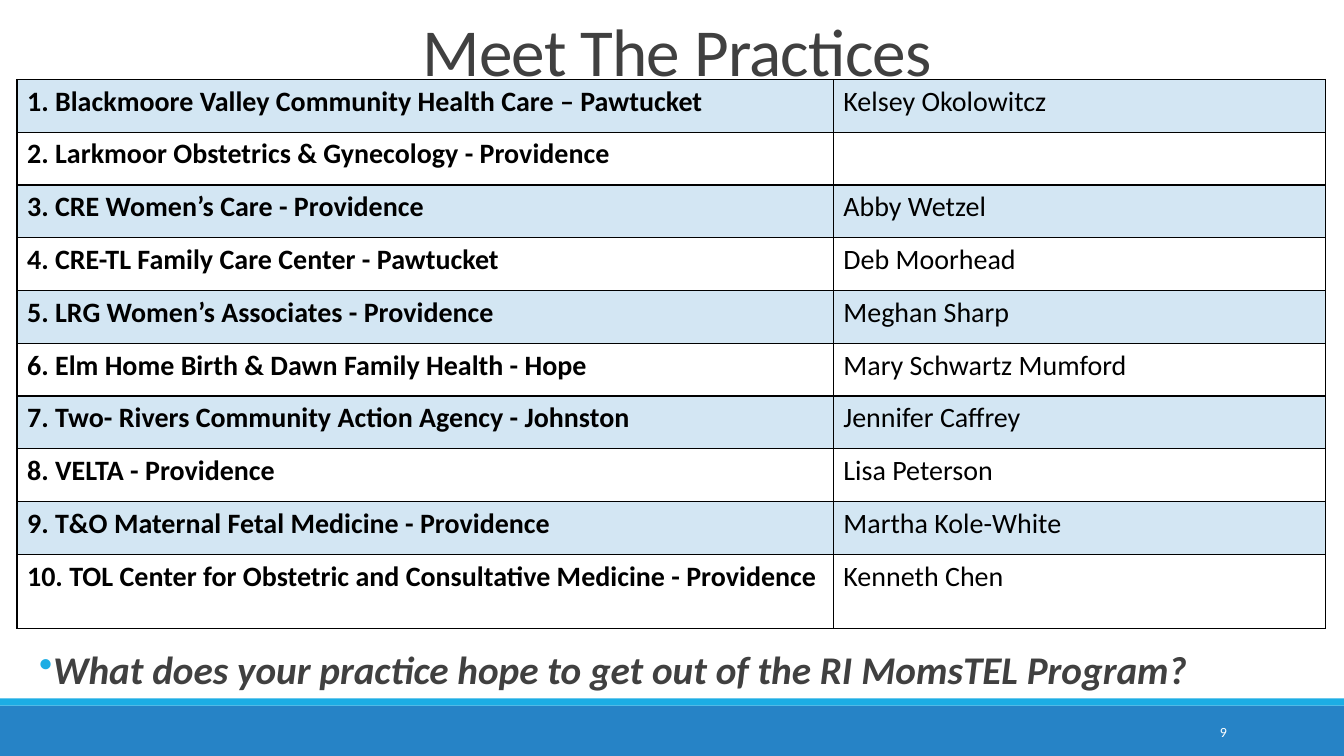
"""Build the slide that lists the practices and their contacts."""
import pptx
import pptx.util
import pptx.dml.color
import pptx.enum.shapes
import pptx.enum.text
import pptx.oxml
import pptx.oxml.ns

Cm, Pt = pptx.util.Cm, pptx.util.Pt
RGBColor = pptx.dml.color.RGBColor
Align = pptx.enum.text.PP_ALIGN
Anchor = pptx.enum.text.MSO_ANCHOR
BLUE = RGBColor(0x26, 0x83, 0xC6)
CYAN = RGBColor(0x1C, 0xAD, 0xE4)
GREY = RGBColor(0x40, 0x40, 0x40)
BLACK = RGBColor(0, 0, 0)
WHITE = RGBColor(255, 255, 255)
NS = pptx.oxml.ns.nsdecls("a")


def write(frame, text, color, font, para):
    """Put one styled paragraph in a frame and return it."""
    line = frame.paragraphs[0]
    run = line.add_run()
    run.text = text
    run.font.color.rgb = color
    for target, style in ((run.font, {"name": "Calibri", **font}), (line, para)):
        for key, value in style.items():
            setattr(target, key, value)
    return line


deck = pptx.Presentation()
deck.slide_width, deck.slide_height = Cm(33.87), Cm(19.05)
slide = deck.slides.add_slide(deck.slide_layouts[6])

for top, height, color in ((17.78, 1.27, BLUE), (17.6, 0.18, CYAN)):
    band = slide.shapes.add_shape(
        pptx.enum.shapes.MSO_SHAPE.RECTANGLE, 0, Cm(top), deck.slide_width, Cm(height))
    band.shadow.inherit = False
    band.fill.solid()
    band.fill.fore_color.rgb = color
    band.line.fill.background()

texts = [
    ("9", (27.51, 17.93, 3.66, 1.02), WHITE, Anchor.MIDDLE,
     {"size": Pt(10)}, {"alignment": Align.RIGHT}),
    ("Meet The Practices", (5.61, 0.33, 22.91, 2.06), GREY, Anchor.BOTTOM,
     {"size": Pt(48)}, {"alignment": Align.CENTER, "line_spacing": 0.85}),
    ("What does your practice hope to get out of the RI MomsTEL Program?",
     (0.99, 16.26, 31.42, 1.22), GREY, Anchor.TOP,
     {"size": Pt(28), "bold": True, "italic": True},
     {"line_spacing": 0.9, "space_before": Pt(12), "space_after": Pt(2)}),
]
lines = []
for text, place, color, anchor, font, para in texts:
    frame = slide.shapes.add_textbox(*map(Cm, place)).text_frame
    frame.word_wrap = True
    frame.vertical_anchor = anchor
    lines.append(write(frame, text, color, font, para))

number, title, ask = lines
title.runs[0].font._element.set("spc", "-50")
frame.margin_left = frame.margin_right = 0
props = ask._p.get_or_add_pPr()
props.set("marL", str(Cm(0.25)))
props.set("indent", str(Cm(-0.25)))
for part in (f'<a:buClr {NS}><a:srgbClr val="{CYAN}"/></a:buClr>',
             f'<a:buChar {NS} char="•"/>'):
    props.append(pptx.oxml.parse_xml(part))

rows = [
    ("Blackmoore Valley Community Health Care – Pawtucket", "Kelsey Okolowitcz"),
    ("Larkmoor Obstetrics & Gynecology - Providence", ""),
    ("CRE Women’s Care - Providence", "Abby Wetzel"),
    ("CRE-TL Family Care Center - Pawtucket", "Deb Moorhead"),
    ("LRG Women’s Associates - Providence", "Meghan Sharp"),
    ("Elm Home Birth & Dawn Family Health - Hope", "Mary Schwartz Mumford"),
    ("Two- Rivers Community Action Agency - Johnston", "Jennifer Caffrey"),
    ("VELTA - Providence", "Lisa Peterson"),
    ("T&O Maternal Fetal Medicine - Providence", "Martha Kole-White"),
    ("TOL Center for Obstetric and Consultative Medicine - Providence", "Kenneth Chen"),
]
table = slide.shapes.add_table(
    len(rows), 2, Cm(0.43), Cm(2), Cm(32.97), Cm(13.79)).table
table.first_row = table.horz_banding = False
for column, width in zip(table.columns, (20.57, 12.4)):
    column.width = Cm(width)
for index, (site, person) in enumerate(rows):
    table.rows[index].height = Cm(1.86 if index == len(rows) - 1 else 1.33)
    for col, text in enumerate((f"{index + 1}. {site}", person)):
        cell = table.cell(index, col)
        if text:
            write(cell.text_frame, text, BLACK, {"size": Pt(20), "bold": col == 0}, {})
        if index % 2:
            cell.fill.background()
        else:
            cell.fill.solid()
            cell.fill.fore_color.rgb = BLUE
        props = cell._tc.get_or_add_tcPr()
        for tint in props.iter(pptx.oxml.ns.qn("a:srgbClr")):
            tint.append(pptx.oxml.parse_xml(f'<a:alpha {NS} val="20000"/>'))
        for spot, side in enumerate("LRTB"):
            props.insert(spot, pptx.oxml.parse_xml(
                f'<a:ln{side} {NS} w="{Pt(1)}"><a:solidFill>'
                f'<a:srgbClr val="{BLACK}"/></a:solidFill></a:ln{side}>'))

deck.save("out.pptx")
